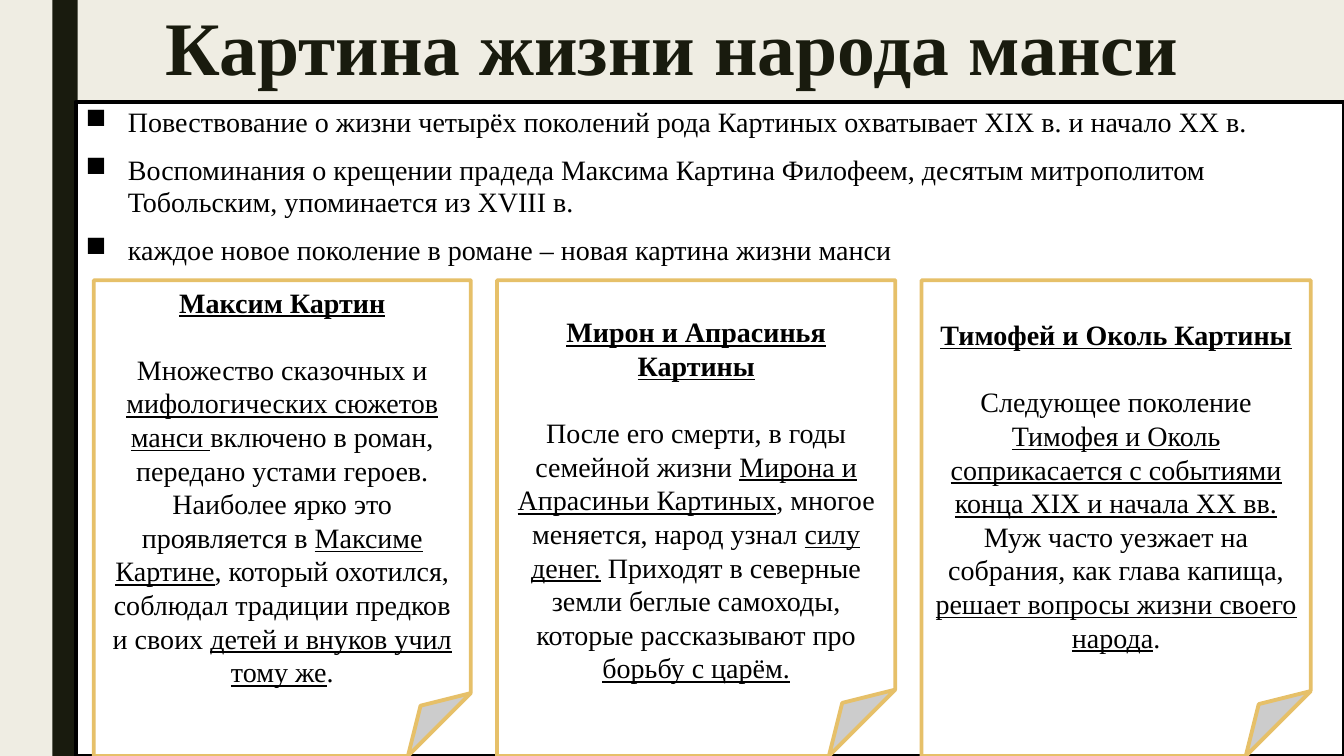
from lxml import etree
from pptx import Presentation
from pptx.dml.color import RGBColor
from pptx.enum import shapes, text
from pptx.oxml.ns import qn
from pptx.util import Inches, Pt

FACE = "Times New Roman"
DARK, BLACK, WHITE, GOLD, CREAM = "191B0E", "000000", "FFFFFF", "E6C069", "EFEDE3"
KIND = shapes.MSO_SHAPE
ALIGN = text.PP_ALIGN
ANCHOR = text.MSO_ANCHOR

POINTS = [
    "Повествование о жизни четырёх поколений рода Картиных охватывает XIX в. и начало XX в.",
    "Воспоминания о крещении прадеда Максима Картина Филофеем, десятым митрополитом "
    "Тобольским, упоминается из XVIII в.",
    "каждое новое поколение в романе – новая картина жизни манси",
]
CARDS = [
    (0.93, 3.74, 0.05, "Максим Картин",
     "Множество сказочных и |мифологических сюжетов манси |включено в роман, передано "
     "устами героев. Наиболее ярко это проявляется в |Максиме Картине|, который охотился, "
     "соблюдал традиции предков и своих |детей и внуков учил тому же|."),
    (4.93, 3.95, 0.34, "Мирон и Апрасинья Картины",
     "После его смерти, в годы семейной жизни |Мирона и Апрасиньи Картиных|, многое "
     "меняется, народ узнал |силу денег.| Приходят в северные земли беглые самоходы, "
     "которые рассказывают про |борьбу с царём."),
    (9.14, 3.86, 0.05, "Тимофей и Околь Картины",
     "Следующее поколение |Тимофея и Околь соприкасается с событиями конца XIX и начала "
     "XX вв. |Муж часто уезжает на собрания, как глава капища, |решает вопросы жизни "
     "своего народа|."),
]


def color(code):
    """Turn a hex string into a colour."""
    return RGBColor.from_string(code)


def style(para, size, code=BLACK, bold=False):
    """Set the font of a paragraph."""
    font = para.font
    font.name, font.size, font.bold = FACE, Pt(size), bold
    font.color.rgb = color(code)


def panel(slide, kind, box, fill, line=None):
    """Draw a flat filled shape, outlined if a line colour is given."""
    shape = slide.shapes.add_shape(kind, *map(Inches, box))
    shape.shadow.inherit = False
    shape.fill.solid()
    shape.fill.fore_color.rgb = color(fill)
    if line:
        shape.line.color.rgb = color(line)
        shape.line.width = Pt(2.75)
    else:
        shape.line.fill.background()
    return shape


def title(slide, box, words):
    """Write the centred heading."""
    frame = slide.shapes.add_textbox(*map(Inches, box)).text_frame
    frame.word_wrap = True
    frame.vertical_anchor = ANCHOR.MIDDLE
    para = frame.paragraphs[0]
    para.text = words
    para.alignment = ALIGN.CENTER
    para.line_spacing = 0.89
    style(para, 54, DARK, True)


def bullets(slide, box, points):
    """Draw the outlined panel with its bulleted list."""
    frame = panel(slide, KIND.RECTANGLE, box, WHITE, BLACK).text_frame
    frame.vertical_anchor = ANCHOR.TOP
    for i, point in enumerate(points):
        para = frame.add_paragraph() if i else frame.paragraphs[0]
        para.text = point
        props = para._p.get_or_add_pPr()
        props.set("marL", str(Inches(0.42)))
        props.set("indent", str(Inches(-0.42)))
        etree.SubElement(props, qn("a:buChar")).set("char", "■")
        para.alignment = ALIGN.LEFT
        para.line_spacing = 0.94
        para.space_before = Pt(10 if i else 0)
        para.space_after = Pt(2)
        style(para, 20)


def card(slide, box, inset, name, story):
    """Draw a folded card; every second part of the story is underlined."""
    frame = panel(slide, KIND.FOLDED_CORNER, box, WHITE, GOLD).text_frame
    frame.word_wrap = True
    frame.vertical_anchor = ANCHOR.MIDDLE
    frame.margin_top = Inches(inset)
    head, body = frame.paragraphs[0], frame.add_paragraph()
    head.text = name
    style(head, 20, bold=True)
    head.font.underline = True
    style(body, 20)
    body.space_before = Pt(24)
    for i, part in enumerate(story.split("|")):
        run = body.add_run()
        run.text = part
        if i % 2:
            run.font.underline = True
    for para in (head, body):
        para.alignment = ALIGN.CENTER


def main():
    """Build and save the slide."""
    deck = Presentation()
    deck.slide_width, deck.slide_height = Inches(13.33), Inches(7.5)
    slide = deck.slides.add_slide(deck.slide_layouts[6])
    back = slide.background.fill
    back.solid()
    back.fore_color.rgb = color(CREAM)
    panel(slide, KIND.RECTANGLE, (0.52, 0, 0.25, 7.5), DARK)
    title(slide, (0, 0, 13.33, 1.01), "Картина жизни народа манси")
    bullets(slide, (0.75, 1.01, 12.58, 6.49), POINTS)
    for left, width, inset, name, story in CARDS:
        card(slide, (left, 2.78, width, 4.72), inset, name, story)
    deck.save("out.pptx")


if __name__ == "__main__":
    main()
